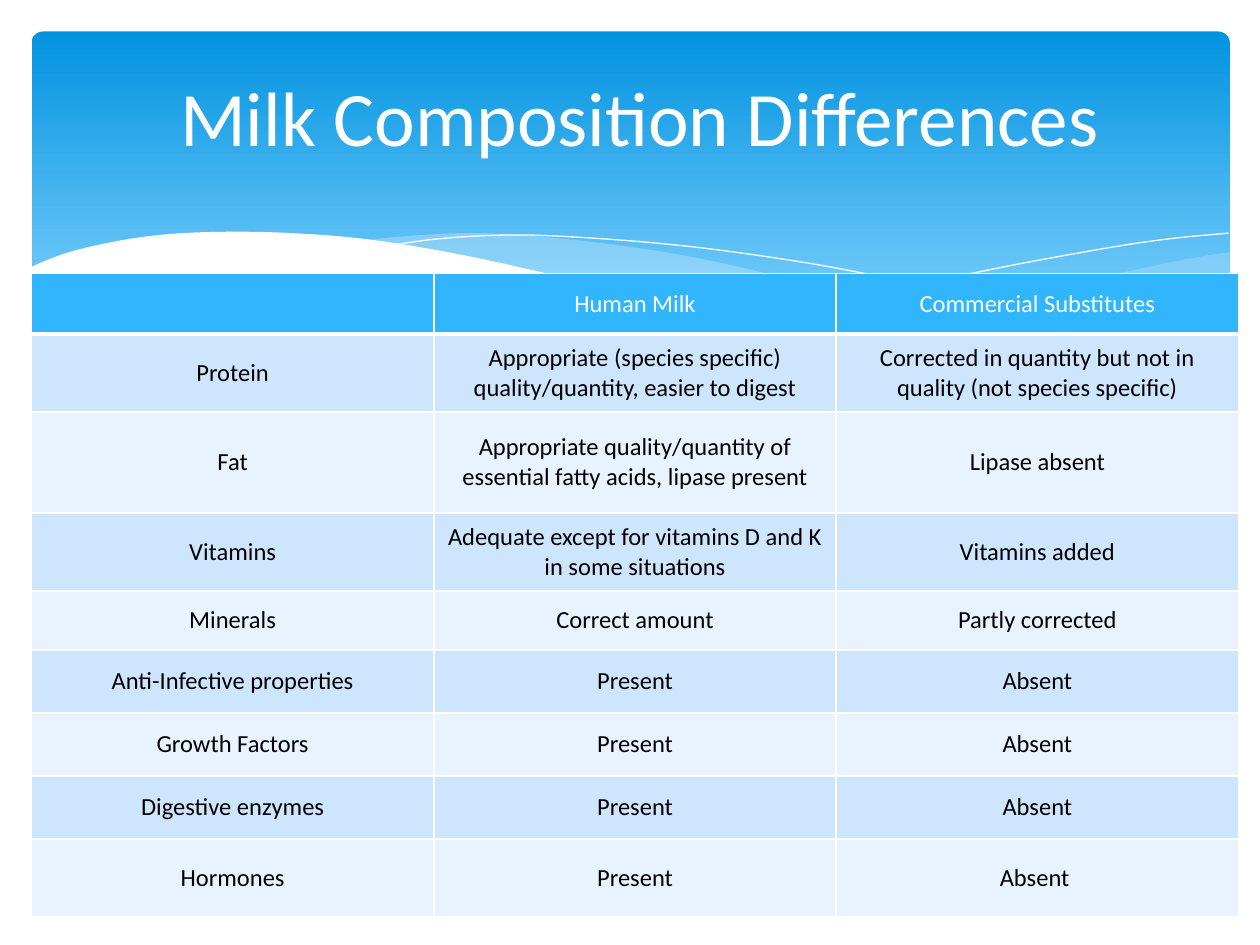
from dataclasses import dataclass

from lxml.etree import SubElement
from pptx import Presentation
from pptx.dml.color import RGBColor as Color
from pptx.enum.shapes import MSO_SHAPE as Shape
from pptx.enum.text import MSO_ANCHOR as Anchor, PP_ALIGN as Align
from pptx.oxml.ns import qn
from pptx.util import Inches, Pt


@dataclass(frozen=True)
class Theme:
    """Colours, font and type sizes of the slide."""
    font: str = "Calibri"
    title_size: int = 44
    cell_size: int = 14
    white: str = "FFFFFF"
    black: str = "000000"
    sky_top: str = "0293E0"
    sky_bottom: str = "83D3FE"
    mist: str = "C6E7FC"
    header: str = "31B6FD"
    bands: tuple = ("CEE5FE", "E8F3FF")


def smooth(knots, steps=6):
    """Return points on a Catmull-Rom curve through the knots."""
    padded = [knots[0], *knots, knots[-1]]
    points = []
    for a, b, c, d in zip(padded, padded[1:], padded[2:], padded[3:]):
        for step in range(steps):
            t = step / steps
            points.append(tuple(
                q + t * (r - p) / 2 + t**2 * (2 * p - 5 * q + 4 * r - s) / 2
                + t**3 * (3 * q - p - 3 * r + s) / 2
                for p, q, r, s in zip(a, b, c, d)))
    return [*points, knots[-1]]


class SlideBuilder:
    """Holds the theme and the current slide."""

    def __init__(self, page, theme):
        self.page = page
        self.theme = theme

    def banner(self, left, top, width, height, rounding):
        """Draw the rounded header with its vertical gradient."""
        box = self.page.shapes.add_shape(
            Shape.ROUNDED_RECTANGLE, *map(Inches, (left, top, width, height)))
        box.adjustments[0] = rounding
        box.shadow.inherit = False
        box.line.fill.background()
        box.fill.gradient()
        box.fill.gradient_angle = 270
        stops = ((0, self.theme.sky_top), (0.9, self.theme.sky_bottom))
        for stop, (position, color) in zip(box.fill.gradient_stops, stops):
            stop.position = position
            stop.color.rgb = Color.from_string(color)

    def outline(self, points, close):
        """Build a freeform through points given in inches."""
        start, *rest = [tuple(map(Inches, point)) for point in points]
        builder = self.page.shapes.build_freeform(*start)
        builder.add_line_segments(rest, close=close)
        shape = builder.convert_to_shape()
        shape.shadow.inherit = False
        return shape

    def wave(self, points, color, opacity=100):
        """Draw a filled wave."""
        shape = self.outline(points, True)
        shape.line.fill.background()
        shape.fill.solid()
        shape.fill.fore_color.rgb = Color.from_string(color)
        if opacity < 100:
            tint = shape._element.spPr.find(qn("a:solidFill"))[0]
            SubElement(tint, qn("a:alpha"), val=str(opacity * 1000))

    def hairline(self, knots):
        """Draw a thin open curve."""
        shape = self.outline(smooth(knots), False)
        shape.fill.background()
        shape.line.color.rgb = Color.from_string(self.theme.white)
        shape.line.width = Pt(0)

    def add_text(self, frame, text, size, color):
        """Set one centred paragraph."""
        para = frame.paragraphs[0]
        para.alignment = Align.CENTER
        span = para.add_run()
        span.text = text
        values = {"name": self.theme.font, "size": Pt(size), "bold": False}
        for name, value in values.items():
            setattr(span.font, name, value)
        span.font.color.rgb = Color.from_string(color)

    def title(self, text, left, top, width, height):
        """Add the slide title."""
        box = self.page.shapes.add_textbox(*map(Inches, (left, top, width, height)))
        frame = box.text_frame
        for name, value in {"word_wrap": True, "vertical_anchor": Anchor.MIDDLE}.items():
            setattr(frame, name, value)
        self.add_text(frame, text, self.theme.title_size, self.theme.white)

    def borders(self, cell, bottom):
        """Give a cell white borders."""
        properties = cell._tc.get_or_add_tcPr()
        for side, width in {"L": 1, "R": 1, "T": 1, "B": bottom}.items():
            edge = SubElement(properties, qn(f"a:ln{side}"), w=str(Pt(width)))
            paint = SubElement(edge, qn("a:solidFill"))
            SubElement(paint, qn("a:srgbClr"), val=self.theme.white)

    def table(self, rows, left, top, width, heights):
        """Add a table with a header and banded rows."""
        theme = self.theme
        columns = len(rows[0])
        grid = self.page.shapes.add_table(
            len(rows), columns, *map(Inches, (left, top, width, sum(heights)))).table
        for name in ("first_row", "horz_banding"):
            setattr(grid, name, False)
        for column in grid.columns:
            column.width = Inches(width / columns)
        for index, (texts, height) in enumerate(zip(rows, heights)):
            grid.rows[index].height = Inches(height)
            fill = theme.bands[(index - 1) % 2] if index else theme.header
            color = theme.black if index else theme.white
            for cell, text in zip(grid.rows[index].cells, texts):
                cell.vertical_anchor = Anchor.MIDDLE
                self.borders(cell, 1 if index else 3)
                cell.fill.solid()
                cell.fill.fore_color.rgb = Color.from_string(fill)
                if text:
                    self.add_text(cell.text_frame, text, theme.cell_size, color)


RIGHT_WAVE = [
    *smooth([(9.76, 2), (9.35, 2.07), (8.61, 2.23), (7.79, 2.42), (6.61, 2.65)]),
    *smooth([(6.61, 2.65), (7.19, 2.72), (7.69, 2.77), (8.24, 2.77),
             (8.81, 2.73), (9.28, 2.63), (9.76, 2.47)]),
]
MIDDLE_WAVE = [
    *smooth([(8.93, 2.73), (8.07, 2.6), (7.06, 2.4), (6.29, 2.22), (5.69, 2.08),
             (5.14, 1.98), (4.42, 1.89), (3.8, 1.85), (3.28, 1.87), (2.86, 1.91)]),
    *smooth([(2.86, 1.91), (3.62, 2.03), (4.49, 2.22), (5.3, 2.4), (6.18, 2.58),
             (6.95, 2.7), (7.61, 2.77), (8.18, 2.78), (8.93, 2.73)]),
]
LONG_LINE = [(3.09, 1.95), (3.44, 1.9), (3.87, 1.87), (4.33, 1.87), (5.1, 1.92),
             (5.82, 2), (6.65, 2.13), (7.6, 2.33), (8.31, 2.51), (9.07, 2.72)]
SHORT_LINE = [(6.13, 2.57), (6.95, 2.35), (7.76, 2.16), (8.66, 1.99),
              (9.24, 1.9), (9.75, 1.85)]
FRONT_WAVE = [
    *smooth([(9.77, 2.46), (9.3, 2.62), (8.75, 2.73), (8.09, 2.77), (7.26, 2.72),
             (6.48, 2.62), (5.55, 2.45), (4.47, 2.2), (3.65, 2.02), (2.92, 1.9),
             (2.3, 1.85), (1.77, 1.84), (1.32, 1.86), (0.95, 1.91), (0.59, 1.99),
             (0.36, 2.07), (0.23, 2.13)]),
    (0.23, 3.29), (9.77, 3.29),
]
MILK_ROWS = [
    ("", "Human Milk", "Commercial Substitutes"),
    ("Protein", "Appropriate (species specific) quality/quantity, easier to digest",
     "Corrected in quantity but not in quality (not species specific)"),
    ("Fat", "Appropriate quality/quantity of essential fatty acids, lipase present",
     "Lipase absent"),
    ("Vitamins", "Adequate except for vitamins D and K in some situations",
     "Vitamins added"),
    ("Minerals", "Correct amount", "Partly corrected"),
    ("Anti-Infective properties", "Present", "Absent"),
    ("Growth Factors", "Present", "Absent"),
    ("Digestive enzymes", "Present", "Absent"),
    ("Hormones", "Present", "Absent "),
]
ROW_HEIGHTS = [0.48, 0.62, 0.8, 0.62, 0.47, 0.5, 0.5, 0.5, 0.62]


def main():
    """Build and save the milk comparison slide."""
    deck = Presentation()
    deck.slide_width, deck.slide_height = Inches(10), Inches(7.5)
    theme = Theme()
    builder = SlideBuilder(deck.slides.add_slide(deck.slide_layouts[6]), theme)
    builder.banner(0.25, 0.25, 9.51, 2.7, 0.034)
    builder.wave(RIGHT_WAVE, theme.mist, 29)
    builder.wave(MIDDLE_WAVE, theme.mist, 40)
    builder.hairline(LONG_LINE)
    builder.hairline(SHORT_LINE)
    builder.wave(FRONT_WAVE, theme.white)
    builder.title("Milk Composition Differences", 0.58, 0.42, 9, 1)
    builder.table(MILK_ROWS, 0.25, 2.17, 9.58, ROW_HEIGHTS)
    deck.save("out.pptx")


if __name__ == "__main__":
    main()
